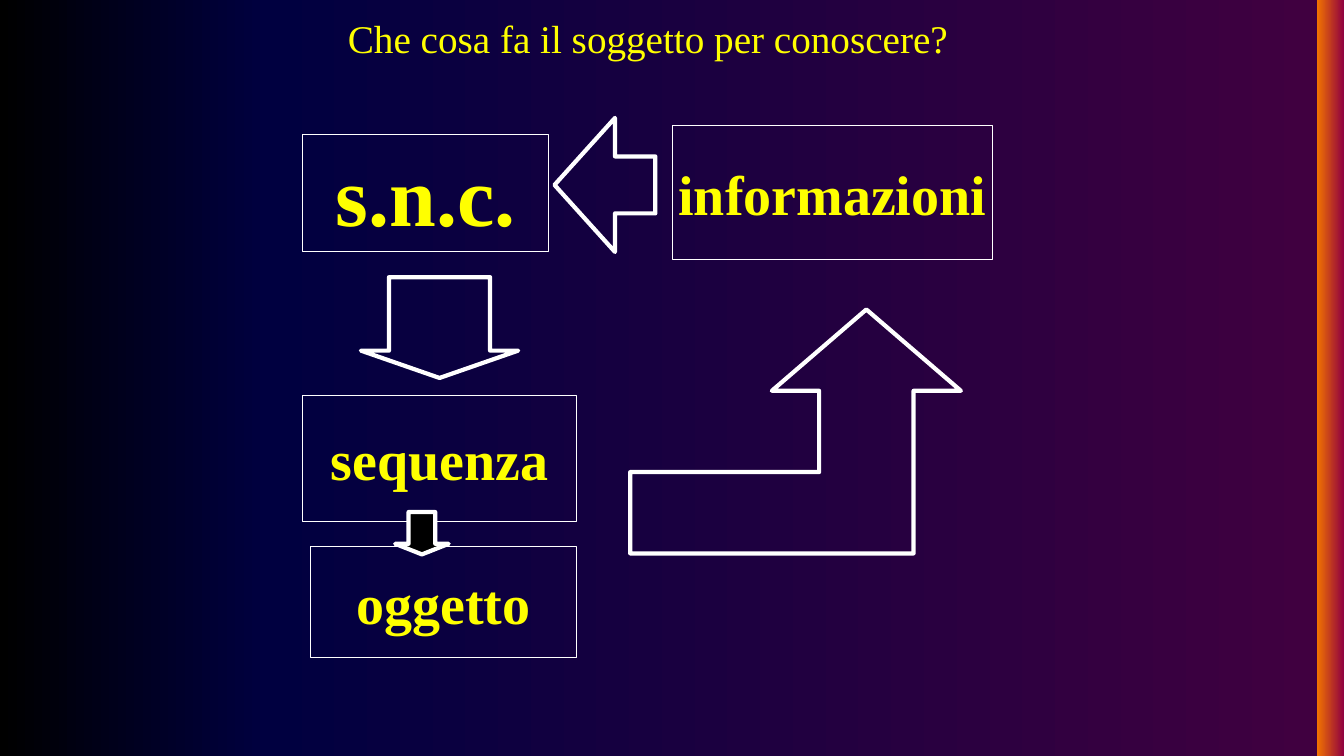
from lxml import etree
from pptx import Presentation
from pptx.dml.color import RGBColor
from pptx.enum.shapes import MSO_SHAPE
from pptx.enum.text import MSO_ANCHOR, PP_ALIGN
from pptx.oxml.ns import qn
from pptx.util import Inches, Pt

RECTANGLE = MSO_SHAPE.RECTANGLE
DOWN_ARROW = MSO_SHAPE.DOWN_ARROW
LEFT_ARROW = MSO_SHAPE.LEFT_ARROW
TOP, MIDDLE = MSO_ANCHOR.TOP, MSO_ANCHOR.MIDDLE
LEFT, CENTER = PP_ALIGN.LEFT, PP_ALIGN.CENTER

WHITE = RGBColor(0xFF, 0xFF, 0xFF)
YELLOW = RGBColor(0xFF, 0xFF, 0x00)
BLACK = RGBColor(0x00, 0x00, 0x00)
NAVY = RGBColor(0x00, 0x00, 0x40)
PURPLE = RGBColor(0x40, 0x00, 0x40)
ORANGE = RGBColor(0xF2, 0x73, 0x00)
CRIMSON = RGBColor(0x8F, 0x00, 0x40)
AMBER = RGBColor(0xFF, 0xBF, 0x00)
FONT = "Times New Roman"


def outline(shape, width, fill=None):
    shape.shadow.inherit = False
    if fill is None:
        shape.fill.background()
    else:
        shape.fill.solid()
        shape.fill.fore_color.rgb = fill
    shape.line.color.rgb = WHITE
    shape.line.width = Pt(width)


def write(shape, text, size, bold, alignment, anchor):
    frame = shape.text_frame
    frame.word_wrap = False
    frame.vertical_anchor = anchor
    paragraph = frame.paragraphs[0]
    paragraph.alignment = alignment
    run = paragraph.add_run()
    run.text = text
    run.font.name = FONT
    run.font.size = Pt(size)
    run.font.bold = bold
    run.font.color.rgb = YELLOW


presentation = Presentation()
presentation.slide_width = Inches(13.33)
presentation.slide_height = Inches(7.5)
slide = presentation.slides.add_slide(presentation.slide_layouts[5])

# Background gradient, left to right
background = slide.background.fill
background.gradient()
background.gradient_angle = 0
stops = slide.element.find(".//" + qn("a:gsLst"))
for stop in list(stops):
    stops.remove(stop)
for percent, color in [(0, BLACK), (20, NAVY), (98, PURPLE),
                       (98, ORANGE), (100, CRIMSON), (100, AMBER)]:
    stop = etree.SubElement(stops, qn("a:gs"), pos=str(percent * 1000))
    etree.SubElement(stop, qn("a:srgbClr"), val=str(color))

# Title
title = slide.shapes.title
title.left, title.top = Inches(3.35), Inches(0.09)
title.width, title.height = Inches(6.21), Inches(0.57)
write(title, "Che cosa fa il soggetto per conoscere?", 28, False, LEFT, TOP)

# Labelled boxes
for text, size, *place in [
    ("s.n.c.", 60, 3, 1.33, 2.44, 1.17),
    ("sequenza", 40, 3, 3.92, 2.72, 1.25),
    ("informazioni", 40, 6.67, 1.25, 3.17, 1.33),
    ("oggetto", 40, 3.08, 5.42, 2.64, 1.1),
]:
    box = slide.shapes.add_shape(RECTANGLE, *map(Inches, place))
    outline(box, 0.75)
    write(box, text, size, True, CENTER, MIDDLE)

# Bent arrow on a grid of 7 columns and 3 rows
COLUMN, ROW = Inches(3.28 / 7), Inches(2.42 / 3)
corners = [(5, 0), (3, 1), (4, 1), (4, 2), (0, 2), (0, 3), (6, 3), (6, 1), (7, 1)]
points = [(Inches(6.25) + column * COLUMN, Inches(3.07) + row * ROW)
          for column, row in corners]
builder = slide.shapes.build_freeform(*points[0])
builder.add_line_segments(points[1:], close=True)
outline(builder.convert_to_shape(), 3)

# Block arrows
for kind, shaft, head, fill, *place in [
    (DOWN_ARROW, 0.643, 0.271, None, 3.58, 2.75, 1.56, 1),
    (LEFT_ARROW, 0.425, 0.6, None, 5.5, 1.17, 1, 1.33),
    (DOWN_ARROW, 0.5, 0.25, BLACK, 3.92, 5.08, 0.53, 0.42),
]:
    arrow = slide.shapes.add_shape(kind, *map(Inches, place))
    arrow.adjustments[0] = shaft
    arrow.adjustments[1] = head
    outline(arrow, 3, fill)

presentation.save("out.pptx")
